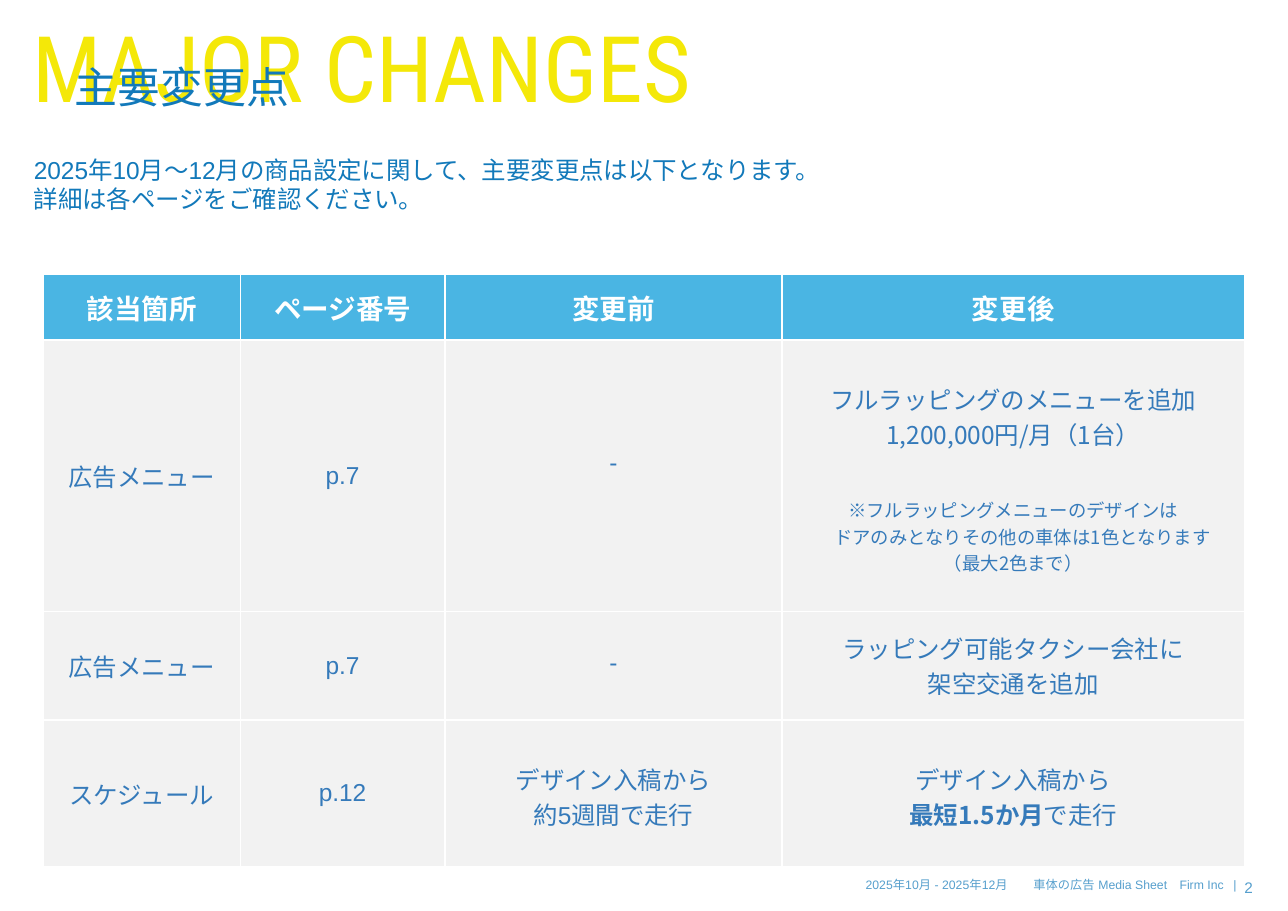
from dataclasses import dataclass

from lxml.etree import SubElement
from pptx import Presentation
from pptx.dml.color import RGBColor
from pptx.enum.text import MSO_ANCHOR as Anchor, MSO_AUTO_SIZE as Fit, PP_ALIGN as Align
from pptx.oxml.ns import qn
from pptx.util import Cm, Pt


@dataclass(frozen=True)
class Theme:
    yellow: str = "F4E808"
    blue: str = "1279BA"
    pale: str = "569FCD"
    body: str = "357ABA"
    white: str = "FFFFFF"
    head: str = "4AB5E3"
    grey: str = "F2F2F2"
    huge: int = 60
    large: int = 28
    label: int = 18
    text: int = 16
    note: int = 12
    page: int = 10
    foot: int = 8
    sans: str = "Arial"
    title: str = "Roboto Condensed"
    sub: str = "Lato"
    kanji: str = "Noto Sans CJK JP"


@dataclass(frozen=True)
class Line:
    """One paragraph; lead is its bold opening."""
    text: str
    lead: str = ""
    size: int = 0
    before: int = 0
    indent: int = 0


THEME = Theme()
COLS = (4.55, 4.72, 7.77, 10.67)
ROWS = (1.52, 6.25, 2.51, 3.38)
HEADS = ("該当箇所", "ページ番号", "変更前", "変更後")
FOOT = "2025年10月 - 2025年12月\t車体の広告 Media Sheet\tFirm Inc\t|"
STOPS = (3.87, 7.24, 8.48)

# Each change: place, page, then (top gap, lines) before and after; no gap means centred
CHANGES = (
    ("広告メニュー", "p.7", (2.52, ["-"]), (0.95, [
        "フルラッピングのメニューを追加",
        "1,200,000円/月（1台）",
        Line("※フルラッピングメニューのデザインは", size=THEME.note, before=29),
        Line("ドアのみとなりその他の車体は1色となります", size=THEME.note, indent=12),
        Line("（最大2色まで）", size=THEME.note),
    ])),
    ("広告メニュー", "p.7", (0.89, ["-"]),
     (None, ["ラッピング可能タクシー会社に", "架空交通を追加"])),
    ("スケジュール", "p.12", (0.95, ["デザイン入稿から", "約5週間で走行"]),
     (0.95, ["デザイン入稿から", Line("で走行", lead="最短1.5か月")])),
)


def add_run(para, text, size, color, font, asian, bold):
    run = para.add_run()
    run.text = text
    run.font.size = Pt(size)
    run.font.name = font
    run.font.bold = bold
    run.font.color.rgb = RGBColor.from_string(color)
    SubElement(run._r.get_or_add_rPr(), qn("a:ea"), typeface=asian)


def add_tabs(para, stops):
    tabs = SubElement(para._p.get_or_add_pPr(), qn("a:tabLst"))
    for stop in stops:
        SubElement(tabs, qn("a:tab"), pos=str(Cm(stop)), algn="l")


def write(frame, lines, size=THEME.text, color=THEME.blue, font=THEME.sans,
          asian=None, bold=False, align=Align.LEFT, space=None, stops=()):
    for i, line in enumerate(lines):
        if isinstance(line, str):
            line = Line(line)
        para = frame.paragraphs[0] if i == 0 else frame.add_paragraph()
        para.alignment = align
        if space:
            para.line_spacing = space
        if line.before:
            para.space_before = Pt(line.before)
        if line.indent:
            para._p.get_or_add_pPr().set("marL", str(Pt(line.indent)))
        if stops:
            add_tabs(para, stops)
        for part, heavy in ((line.lead, True), (line.text, bold)):
            if part:
                add_run(para, part, line.size or size, color, font, asian or font, heavy)


def set_frame(frame, anchor, flush=False):
    frame.word_wrap = True
    frame.auto_size = Fit.NONE
    frame.vertical_anchor = anchor
    if flush:
        frame.margin_left = frame.margin_right = 0
        frame.margin_top = frame.margin_bottom = 0


def add_title(slide):
    title = slide.shapes.title
    title.left, title.top = Cm(0.74), Cm(0.53)
    title.width, title.height = Cm(28.12), Cm(2.31)
    set_frame(title.text_frame, Anchor.MIDDLE, flush=True)
    write(title.text_frame, ["MAJOR CHANGES"], size=THEME.huge,
          color=THEME.yellow, font=THEME.title, space=0.9)


def add_text(slide, place, lines, anchor=Anchor.TOP, flush=False, **style):
    box = slide.shapes.add_textbox(*map(Cm, place))
    set_frame(box.text_frame, anchor, flush)
    write(box.text_frame, lines, **style)


def fill_cell(cell, lines, fill=THEME.grey, gap=None, **style):
    cell.fill.solid()
    cell.fill.fore_color.rgb = RGBColor.from_string(fill)
    cell.vertical_anchor = Anchor.MIDDLE if gap is None else Anchor.TOP
    if gap is not None:
        cell.margin_top = Cm(gap)
    look = {"color": THEME.body, "asian": THEME.kanji, "align": Align.CENTER}
    write(cell.text_frame, lines, **(look | style))


def add_grid(slide):
    table = slide.shapes.add_table(
        len(ROWS), len(COLS), Cm(0.99), Cm(6.32), Cm(sum(COLS)), Cm(sum(ROWS))).table
    table.horz_banding = False
    for col, width in zip(table.columns, COLS):
        col.width = Cm(width)
    for row, height in zip(table.rows, ROWS):
        row.height = Cm(height)
    for i, head in enumerate(HEADS):
        fill_cell(table.cell(0, i), [head], fill=THEME.head,
                  size=THEME.label, color=THEME.white, bold=True)
    for i, (place, page, old, new) in enumerate(CHANGES, 1):
        fill_cell(table.cell(i, 0), [place])
        fill_cell(table.cell(i, 1), [page])
        fill_cell(table.cell(i, 2), old[1], gap=old[0])
        fill_cell(table.cell(i, 3), new[1], gap=new[0], font=THEME.kanji)


def main():
    deck = Presentation()
    deck.slide_width, deck.slide_height = Cm(29.7), Cm(21)
    slide = deck.slides.add_slide(deck.slide_layouts[5])
    add_text(slide, (19.71, 20.09, 9.3, 0.58), [FOOT], size=THEME.foot,
             color=THEME.pale, stops=STOPS)
    add_title(slide)
    add_text(slide, (28.12, 20.17, 1.02, 0.56), ["2"], anchor=Anchor.MIDDLE,
             size=THEME.page, color=THEME.pale, align=Align.RIGHT)
    add_text(slide, (0.53, 3.45, 28.63, 1.63), [
        "2025年10月～12月の商品設定に関して、主要変更点は以下となります。",
        "詳細は各ページをご確認ください。"])
    add_text(slide, (1.73, 1.52, 15.37, 1.07), ["主要変更点"], anchor=Anchor.MIDDLE,
             flush=True, size=THEME.large, font=THEME.sub, space=0.9)
    add_grid(slide)
    deck.save("out.pptx")


if __name__ == "__main__":
    main()
